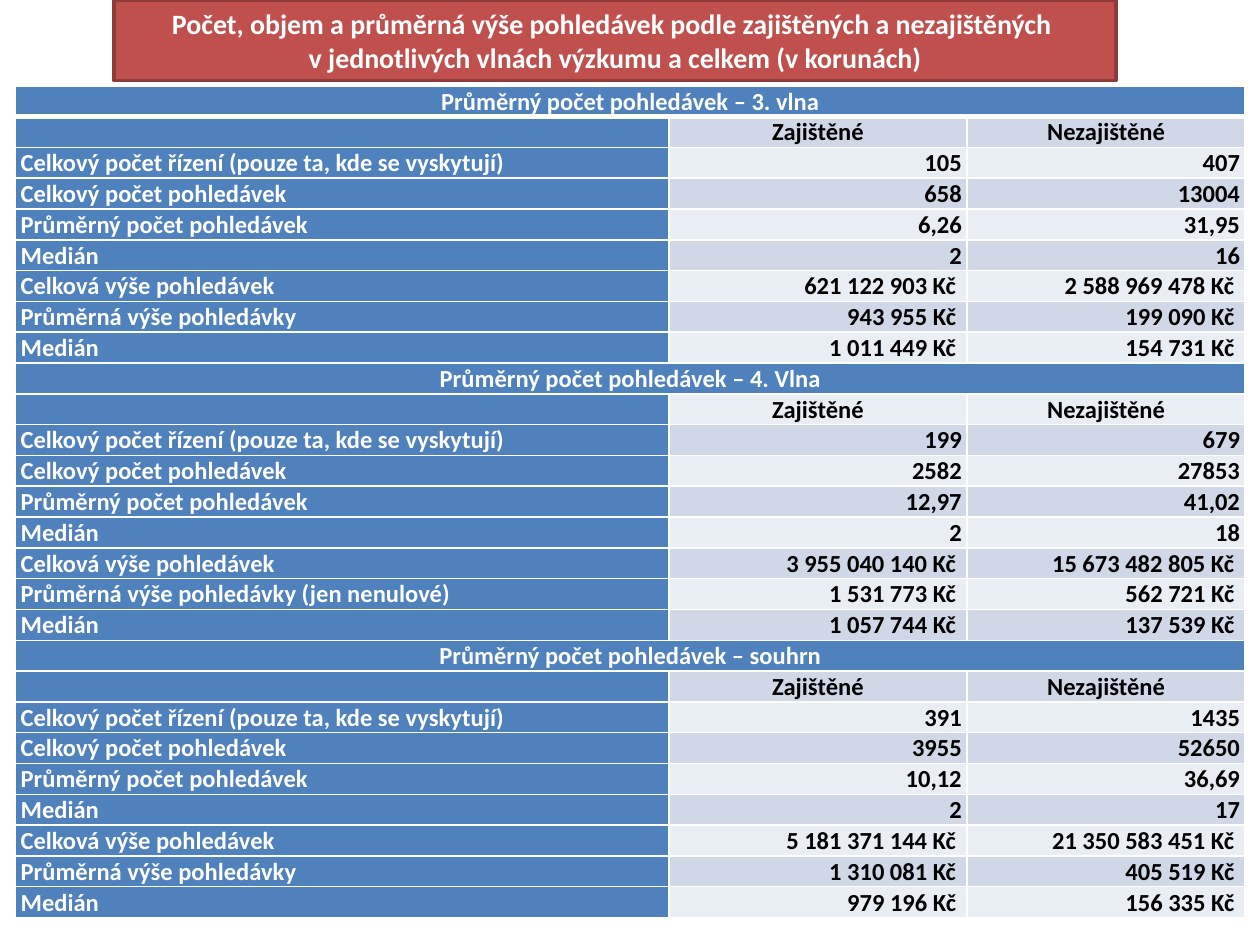
from lxml.etree import SubElement
from pptx import Presentation
from pptx.dml.color import RGBColor
from pptx.enum.shapes import MSO_SHAPE
from pptx.enum.text import MSO_ANCHOR, PP_ALIGN
from pptx.oxml import parse_xml
from pptx.oxml.ns import nsdecls, qn
from pptx.util import Pt

WHITE = RGBColor(0xFF, 0xFF, 0xFF)
BLACK = RGBColor(0x00, 0x00, 0x00)
BLUE = RGBColor(0x4F, 0x81, 0xBD)
BANDS = (RGBColor(0xE9, 0xED, 0xF4), RGBColor(0xD0, 0xD8, 0xE8))
RED = RGBColor(0xC0, 0x50, 0x4D)
DARK_RED = RGBColor(0x8E, 0x3B, 0x39)

FONT = "Calibri"
CELL_SIZE = 14
COL_WIDTHS = (373.4, 170.4, 159)
CELL_FORMAT = {
    "vertical_anchor": MSO_ANCHOR.BOTTOM,
    "margin_left": Pt(3), "margin_right": Pt(3),
    "margin_top": 0, "margin_bottom": 0,
}

TITLE = (
    "Počet, objem a průměrná výše pohledávek podle zajištěných a nezajištěných ",
    "v jednotlivých vlnách výzkumu a celkem (v korunách)",
)
KINDS = ("", "Zajištěné", "Nezajištěné")
PROCEEDINGS = "Celkový počet řízení (pouze ta, kde se vyskytují)"
COUNT = "Celkový počet pohledávek"
MEAN_COUNT = "Průměrný počet pohledávek"
MEDIAN = "Medián"
AMOUNT = "Celková výše pohledávek"
MEAN_AMOUNT = "Průměrná výše pohledávky"

WAVES = (
    ("3. vlna", (
        (PROCEEDINGS, "105", "407"),
        (COUNT, "658", "13004"),
        (MEAN_COUNT, "6,26", "31,95"),
        (MEDIAN, "2", "16"),
        (AMOUNT, "621 122 903 Kč ", "2 588 969 478 Kč "),
        (MEAN_AMOUNT, "943 955 Kč ", "199 090 Kč "),
        (MEDIAN, "1 011 449 Kč ", "154 731 Kč "),
    )),
    ("4. Vlna", (
        (PROCEEDINGS, "199", "679"),
        (COUNT, "2582", "27853"),
        (MEAN_COUNT, "12,97", "41,02"),
        (MEDIAN, "2", "18"),
        (AMOUNT, "3 955 040 140 Kč ", "15 673 482 805 Kč "),
        (MEAN_AMOUNT + " (jen nenulové)", "1 531 773 Kč ", "562 721 Kč "),
        (MEDIAN, "1 057 744 Kč ", "137 539 Kč "),
    )),
    ("souhrn", (
        (PROCEEDINGS, "391", "1435"),
        (COUNT, "3955", "52650"),
        (MEAN_COUNT, "10,12", "36,69"),
        (MEDIAN, "2", "17"),
        (AMOUNT, "5 181 371 144 Kč ", "21 350 583 451 Kč "),
        (MEAN_AMOUNT, "1 310 081 Kč ", "405 519 Kč "),
        (MEDIAN, "979 196 Kč ", "156 335 Kč "),
    )),
)


def write(p, text, size, color, align):
    p.alignment = align
    r = p.add_run()
    r.text = text
    r.font.color.rgb = color
    for name, value in {"name": FONT, "size": Pt(size), "bold": True}.items():
        setattr(r.font, name, value)


def set_borders(cell, widths):
    """Draw white borders; widths maps L, R, T and B to points."""
    tc_pr = cell._tc.get_or_add_tcPr()
    for i, side in enumerate("LRTB"):
        tc_pr.insert(i, parse_xml(
            f'<a:ln{side} {nsdecls("a")} w="{Pt(widths[side])}"><a:solidFill>'
            f'<a:srgbClr val="{WHITE}"/></a:solidFill></a:ln{side}>'))


def fill_cell(cell, text, fill, color, align, borders):
    for name, value in CELL_FORMAT.items():
        setattr(cell, name, value)
    cell.fill.solid()
    cell.fill.fore_color.rgb = fill
    set_borders(cell, borders)
    p = cell.text_frame.paragraphs[0]
    if text:
        p.space_before = Pt(6)
        write(p, text, CELL_SIZE, color, align)
    else:
        # The end mark sets the height of an empty line.
        SubElement(p._p, qn("a:endParaRPr"), sz=str(CELL_SIZE * 100))


def add_claims_table(slide, left, top, width, height):
    rows = []
    for wave, figures in WAVES:
        heading = f"Průměrný počet pohledávek – {wave}"
        rows += [((heading, "", ""), PP_ALIGN.CENTER), (KINDS, PP_ALIGN.CENTER)]
        rows += [(row, PP_ALIGN.RIGHT) for row in figures]
    table = slide.shapes.add_table(
        len(rows), len(COL_WIDTHS), Pt(left), Pt(top), Pt(width), Pt(height)).table
    for col, col_width in zip(table.columns, COL_WIDTHS):
        col.width = Pt(col_width)

    block = len(rows) // len(WAVES)
    for i, (texts, align) in enumerate(rows):
        table.rows[i].height = Pt(height / len(rows))
        is_heading = i % block == 0
        borders = {"L": 1, "R": 1, "T": 3 if i == 1 else 1, "B": 3 if i == 0 else 1}
        for j, text in enumerate(texts):
            label = is_heading or j == 0
            fill_cell(
                table.cell(i, j), text,
                BLUE if label else BANDS[i % 2],
                WHITE if label else BLACK,
                PP_ALIGN.LEFT if j == 0 and not is_heading else align,
                borders)
        if is_heading:
            table.cell(i, 0).merge(table.cell(i, len(texts) - 1))


def add_title(slide, left, top, width, height):
    sp = slide.shapes.add_shape(
        MSO_SHAPE.RECTANGLE, Pt(left), Pt(top), Pt(width), Pt(height))
    sp.shadow.inherit = False
    sp.fill.solid()
    sp.fill.fore_color.rgb = RED
    sp.line.color.rgb = DARK_RED
    sp.line.width = Pt(2)
    tf = sp.text_frame
    tf.word_wrap = True
    tf.vertical_anchor = MSO_ANCHOR.MIDDLE
    for i, text in enumerate(TITLE):
        p = tf.add_paragraph() if i else tf.paragraphs[0]
        write(p, text, 16, WHITE, PP_ALIGN.CENTER)


def main():
    prs = Presentation()
    prs.slide_width, prs.slide_height = Pt(720), Pt(540)
    slide = prs.slides.add_slide(prs.slide_layouts[6])
    add_claims_table(slide, 8.8, 49, sum(COL_WIDTHS), 476)
    add_title(slide, 65.3, 0, 572.6, 46)
    prs.save("out.pptx")


if __name__ == "__main__":
    main()
